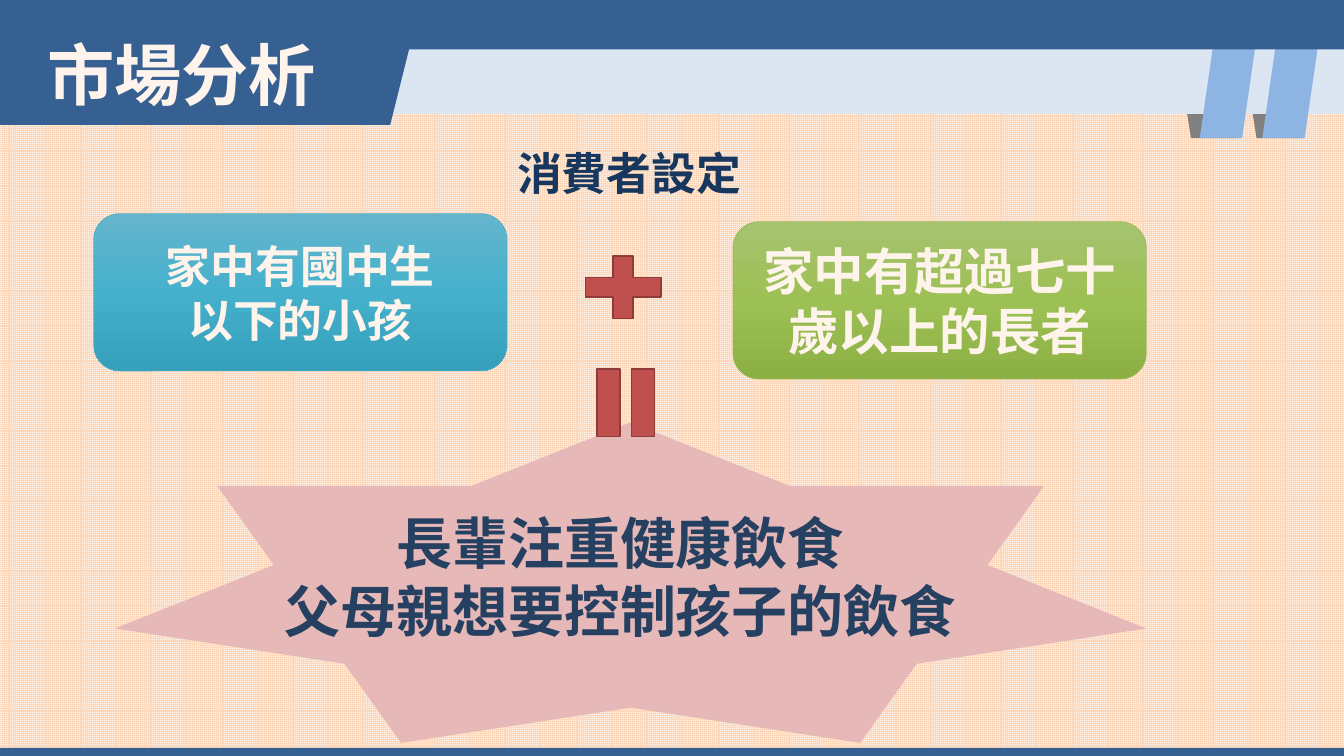
from copy import deepcopy

from pptx import Presentation
from pptx.dml.color import RGBColor
from pptx.enum.dml import MSO_PATTERN as Pattern
from pptx.enum.shapes import MSO_SHAPE as Kind
from pptx.enum.text import MSO_ANCHOR as Anchor, MSO_AUTO_SIZE as Auto, PP_ALIGN as Align
from pptx.oxml.ns import qn
from pptx.util import Inches, Pt

CREAM = RGBColor(0xFE, 0xF4, 0xEC)
PEACH = RGBColor(0xFC, 0xD9, 0xBD)
NAVY = RGBColor(0x37, 0x60, 0x92)
PALE = RGBColor(0xDC, 0xE6, 0xF2)
SKY = RGBColor(0x8E, 0xB4, 0xE3)
GREY = RGBColor(0x80, 0x80, 0x80)
PINK = RGBColor(0xE6, 0xB9, 0xB8)
RED = RGBColor(0xC0, 0x50, 0x4D)
MAROON = RGBColor(0x8E, 0x3B, 0x39)
INK = RGBColor(0x17, 0x37, 0x5E)
DEEP = RGBColor(0x25, 0x40, 0x61)
TEAL = RGBColor(0x4B, 0xAC, 0xC6)
GREEN = RGBColor(0x9B, 0xBB, 0x59)
TEALS = [RGBColor(0x66, 0xB5, 0xCD), RGBColor(0x45, 0xB0, 0xCC), RGBColor(0x36, 0xA0, 0xBC)]
GREENS = [RGBColor(0xA6, 0xC3, 0x6F), RGBColor(0x9D, 0xC0, 0x54), RGBColor(0x8D, 0xB0, 0x45)]
WIDTH, HEIGHT = 13.33, 7.5


def add_shape(slide, kind, box, fill=None, line=None, weight=1):
    shape = slide.shapes.add_shape(kind, *map(Inches, box))
    shape.shadow.inherit = False
    if fill is not None:
        shape.fill.solid()
        shape.fill.fore_color.rgb = fill
    if line is None:
        shape.line.fill.background()
    else:
        shape.line.color.rgb = line
        shape.line.width = Pt(weight)
    return shape


def write(frame, lines, size, color, font="Arial", align=Align.CENTER):
    frame.text = "\n".join(lines)
    for para in frame.paragraphs:
        para.alignment = align
        para.font.name = font
        para.font.size = Pt(size)
        para.font.bold = True
        para.font.color.rgb = color


def add_text(slide, box, lines, size, color, wrap=False, **style):
    frame = slide.shapes.add_textbox(*map(Inches, box)).text_frame
    frame.word_wrap = wrap
    frame.auto_size = Auto.SHAPE_TO_FIT_TEXT
    write(frame, lines, size, color, **style)


def shade(shape, colors):
    shape.fill.gradient()
    shape.fill.gradient_angle = 270
    first = shape._element.spPr.find(".//" + qn("a:gs"))
    first.addnext(deepcopy(first))
    for i, (stop, color) in enumerate(zip(shape.fill.gradient_stops, colors)):
        stop.color.rgb = color
        stop.position = i / 2


def add_header(slide, box):
    left, top, width, height = box
    right = left + width
    for gap in (1.02, 1.67):
        fold = add_shape(slide, Kind.PARALLELOGRAM, (right - gap, top + 0.4, 0.61, 0.97), GREY)
        fold._element.spPr.xfrm.set("flipH", "1")
    add_shape(slide, Kind.RECTANGLE, (left + 3.27, top + 0.1, width - 3.27, 1.03), PALE)
    for gap in (1.43, 0.81):
        add_shape(slide, Kind.PARALLELOGRAM, (right - gap, top + 0.4, 0.56, 0.97), SKY)
    add_shape(slide, Kind.RECTANGLE, (left, top, width, 0.49), NAVY)
    add_shape(slide, Kind.PARALLELOGRAM, (left - 0.27, top, 4.45, height), NAVY)
    add_text(slide, (left + 0.37, top + 0.28, 2.89, 0.91), ["市場分析"], 48, CREAM,
             font="Noto Sans CJK SC", align=Align.LEFT)


def add_footer(slide, box):
    add_shape(slide, Kind.RECTANGLE, box, NAVY)


def add_card(slide, box, lines, size, colors, line):
    card = add_shape(slide, Kind.ROUNDED_RECTANGLE, box, line=line, weight=0.5)
    shade(card, colors)
    frame = card.text_frame
    frame.word_wrap = True
    frame.vertical_anchor = Anchor.MIDDLE
    write(frame, lines, size, CREAM)


def add_buyers(slide, box):
    left, top, width, height = box
    wide, tall = 4.1, 1.56
    add_text(slide, (left + 4.1, top, 2.45, 0.64), ["消費者設定"], 32, INK, align=Align.LEFT)
    add_card(slide, (left, top + 0.72, wide, tall), ["家中有國中生", "以下的小孩"], 32, TEALS, TEAL)
    add_card(slide, (left + width - wide, top + height - tall, wide, tall),
             ["家中有超過七十歲以上的長者"], 36, GREENS, GREEN)
    add_shape(slide, Kind.MATH_PLUS, (left + 4.74, top + 1.03, 1.02, 0.84), RED, MAROON)


def add_result(slide, box):
    left, top, width, height = box
    add_shape(slide, Kind.STAR_7_POINT, box, PINK)
    add_text(slide, (left + 1.28, top + 0.81, 7.46, 1.45),
             ["長輩注重健康飲食", "父母親想要控制孩子的飲食"], 40, DEEP, wrap=True)
    equal = add_shape(slide, Kind.MATH_EQUAL, (left + 4.61, top - 0.68, 0.91, 0.97), RED, MAROON)
    equal.rotation = 90


def main():
    deck = Presentation()
    deck.slide_width, deck.slide_height = Inches(WIDTH), Inches(HEIGHT)
    slide = deck.slides.add_slide(deck.slide_layouts[6])
    back = slide.background.fill
    back.patterned()
    back.pattern = Pattern.SMALL_GRID
    back.fore_color.rgb = PEACH
    back.back_color.rgb = CREAM
    add_result(slide, (1.14, 4.19, 10.23, 3.18))
    add_header(slide, (0, 0, WIDTH, 1.24))
    add_footer(slide, (0, HEIGHT - 0.08, WIDTH, 0.08))
    add_buyers(slide, (0.93, 1.4, 10.44, 2.36))
    deck.save("out.pptx")


if __name__ == "__main__":
    main()
